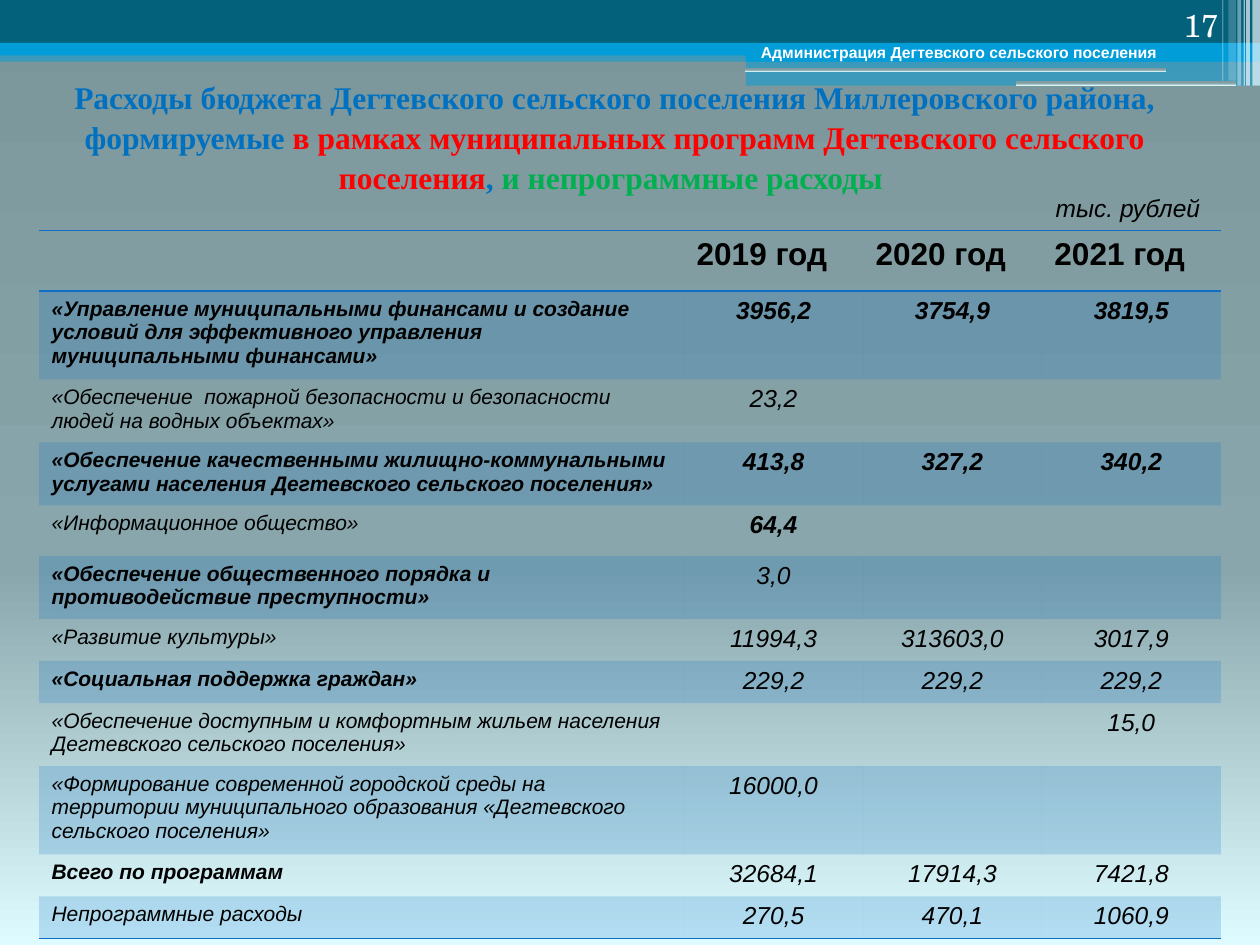
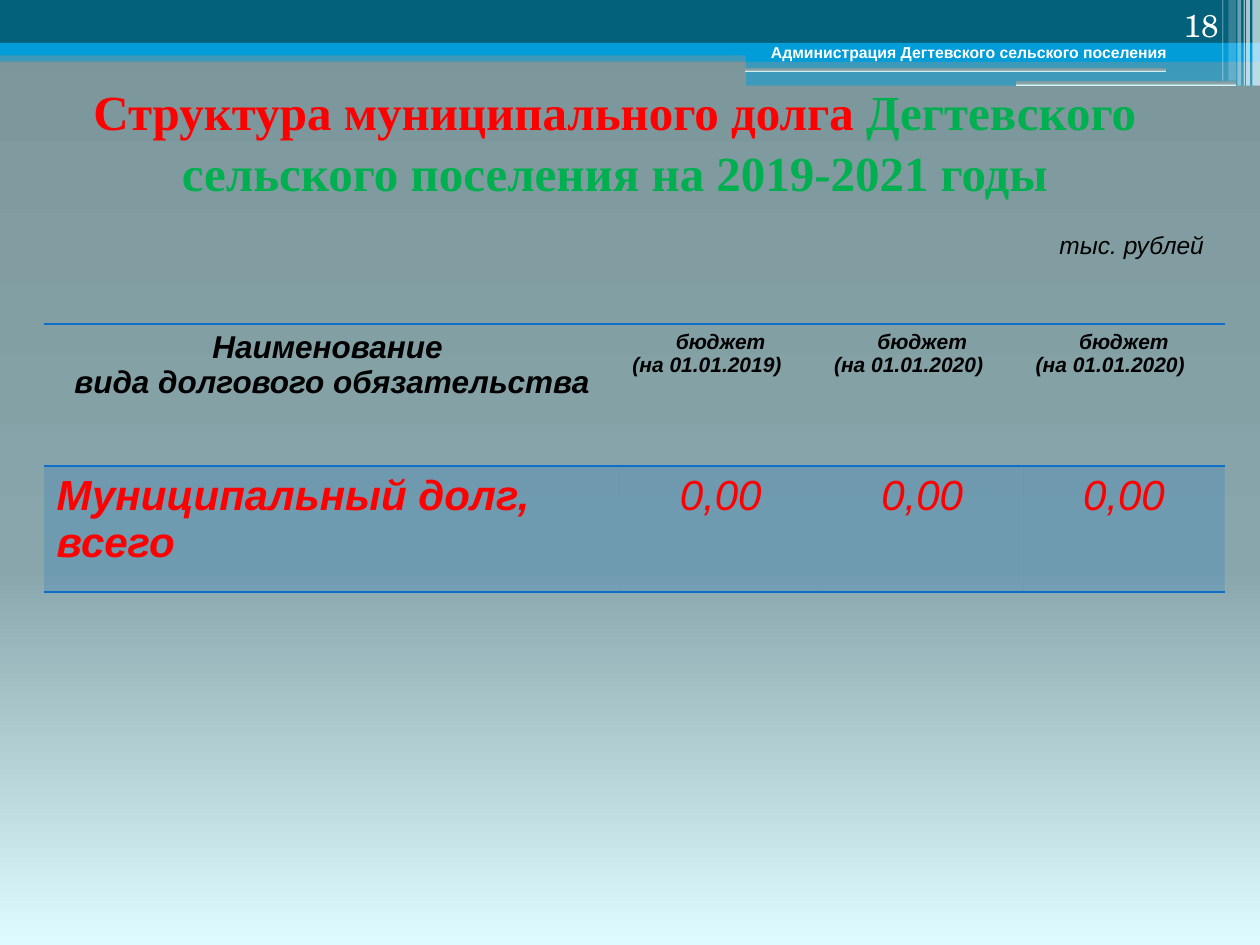
from dataclasses import dataclass
from typing import Any, Optional, Sequence

import pptx
import pptx.dml.color
import pptx.enum.shapes
import pptx.enum.text
import pptx.oxml
import pptx.oxml.ns
import pptx.util
from lxml import etree

Inches = pptx.util.Inches
Pt = pptx.util.Pt
qn = pptx.oxml.ns.qn
ALIGN = pptx.enum.text.PP_ALIGN
ANCHOR = pptx.enum.text.MSO_ANCHOR
SHAPE = pptx.enum.shapes.MSO_SHAPE

COLORS = {
    "teal": "04617B", "sky": "009DD9", "white": "FFFFFF", "black": "000000",
    "accent": "0F6FC6", "blue": "0070C0", "red": "FF0000", "green": "00B050",
}
BACKDROP = ((0, "7B969A"), (60, "88A6AB"), (100, "DEFBFF"))
SANS, SERIF, NUMBER_FONT = "Arial", "Times New Roman", "TeX Gyre Schola"
PLAIN_TABLE = "{2D5ABB26-0587-4C30-8999-92F81FD0307C}"
ROW_TINT = 20


@dataclass(frozen=True)
class Box:
    left: float
    top: float
    width: float
    height: float

    def lengths(self) -> tuple:
        return tuple(Inches(v) for v in (self.left, self.top, self.width, self.height))


@dataclass(frozen=True)
class Band:
    box: Box
    color: Optional[str] = None  # None takes the backdrop gradient
    opacity: int = 100


@dataclass(frozen=True)
class Span:
    text: str
    size: float
    color: str = "black"
    bold: bool = False
    italic: bool = False
    font: str = SANS


@dataclass(frozen=True)
class Entry:
    lines: Sequence[Span] = ()
    aligns: Sequence[Any] = (ALIGN.LEFT,)


@dataclass(frozen=True)
class Program:
    title: str
    amounts: Sequence[str]
    height: float
    bold_title: bool = False
    bold_amounts: bool = False


BANDS = [
    Band(Box(0, 0.4, 10, 0.09), "sky", 50),
    Band(Box(0, 0, 10, 0.34), "teal"),
    Band(Box(0, 0.34, 10, 0.1), "sky"),
    Band(Box(5.92, 0.39, 4.08, 0.1), "sky"),
    Band(Box(5.92, 0.48, 4.08, 0.2), "sky", 50),
    Band(Box(5.91, 0.54, 3.35, 0.03)),
    Band(Box(8.06, 0.64, 1.75, 0.04)),
] + [
    Band(Box(left, 0, width, height), "white", opacity)
    for left, width, height, opacity in (
        (9.94, 0.06, 0.68, 65), (9.89, 0.03, 0.68, 65), (9.87, 0.01, 0.68, 60),
        (9.82, 0.03, 0.68, 40), (9.75, 0.06, 0.64, 20), (9.7, 0.01, 0.64, 30),
    )
]

PROGRAMS = [
    Program("«Управление муниципальными финансами и создание условий для эффективного "
            "управления муниципальными финансами»",
            ("3956,2", "3754,9", "3819,5"), 0.66, True, True),
    Program("«Обеспечение  пожарной безопасности и безопасности людей на водных объектах»",
            ("23,2", "", ""), 0.47),
    Program("«Обеспечение качественными жилищно-коммунальными услугами населения "
            "Дегтевского сельского поселения»",
            ("413,8", "327,2", "340,2"), 0.47, True, True),
    Program("«Информационное общество»", ("64,4", "", ""), 0.4, False, True),
    Program("«Обеспечение общественного порядка и противодействие преступности»",
            ("3,0", "", ""), 0.47, True),
    Program("«Развитие культуры»", ("11994,3", "313603,0", "3017,9"), 0.32),
    Program("«Социальная поддержка граждан»", ("229,2", "229,2", "229,2"), 0.32, True),
    Program("«Обеспечение доступным и комфортным жильем населения Дегтевского "
            "сельского поселения»", ("", "", "15,0"), 0.47),
    Program("«Формирование современной городской среды на территории муниципального "
            "образования «Дегтевского сельского поселения»", ("16000,0", "", ""), 0.66),
    Program("Всего по программам", ("32684,1", "17914,3", "7421,8"), 0.32, True),
    Program("Непрограммные расходы", ("270,5", "470,1", "1060,9"), 0.32),
]


# Fills
def rgb(name: str) -> pptx.dml.color.RGBColor:
    return pptx.dml.color.RGBColor.from_string(COLORS[name])


def fill_solid(fill: Any, element: Any, color: str, opacity: int = 100) -> None:
    fill.solid()
    fill.fore_color.rgb = rgb(color)
    if opacity < 100:
        tone = element.find(".//" + qn("a:srgbClr"))
        etree.SubElement(tone, qn("a:alpha"), val=str(opacity * 1000))


def fill_backdrop(fill: Any, element: Any) -> None:
    fill.gradient()
    fill.gradient_angle = 270
    stops = element.find(".//" + qn("a:gsLst"))
    for stop in list(stops):
        stops.remove(stop)
    for position, color in BACKDROP:
        stop = etree.SubElement(stops, qn("a:gs"), pos=str(position * 1000))
        etree.SubElement(stop, qn("a:srgbClr"), val=color)


# Text
def add_span(paragraph: Any, span: Span) -> None:
    run = paragraph.add_run()
    run.text = span.text
    run.font.size = Pt(span.size)
    run.font.name = span.font
    run.font.bold = span.bold
    run.font.italic = span.italic
    run.font.color.rgb = rgb(span.color)


def add_text(slide: Any, box: Box, spans: Sequence[Span], align: Any = ALIGN.LEFT,
             anchor: Any = ANCHOR.TOP, spacing: float = 1.0) -> None:
    frame = slide.shapes.add_textbox(*box.lengths()).text_frame
    frame.word_wrap = True
    frame.vertical_anchor = anchor
    paragraph = frame.paragraphs[0]
    paragraph.alignment = align
    paragraph.line_spacing = spacing
    for span in spans:
        add_span(paragraph, span)


# Tables
def add_rule(cell: Any, side: str) -> None:
    line = etree.Element(qn(f"a:{side}"), w=str(Pt(1)))
    solid = etree.SubElement(line, qn("a:solidFill"))
    etree.SubElement(solid, qn("a:srgbClr"), val=COLORS["accent"])
    cell._tc.get_or_add_tcPr().insert(0, line)


def fill_cell(cell: Any, entry: Entry, tinted: bool) -> None:
    if tinted:
        fill_solid(cell.fill, cell._tc.get_or_add_tcPr(), "accent", ROW_TINT)
    else:
        cell.fill.background()
    for number, (span, align) in enumerate(zip(entry.lines, entry.aligns)):
        frame = cell.text_frame
        paragraph = frame.add_paragraph() if number else frame.paragraphs[0]
        paragraph.alignment = align
        add_span(paragraph, span)


def add_ruled_table(slide: Any, left: float, top: float, widths: Sequence[float],
                    heights: Sequence[float], rows: Sequence[Sequence[Entry]]) -> None:
    box = Box(left, top, sum(widths), sum(heights))
    table = slide.shapes.add_table(len(rows), len(widths), *box.lengths()).table
    table._tbl.find(".//" + qn("a:tableStyleId")).text = PLAIN_TABLE
    for column, width in zip(table.columns, widths):
        column.width = Inches(width)
    for row, height in zip(table.rows, heights):
        row.height = Inches(height)
    for r, entries in enumerate(rows):
        for c, entry in enumerate(entries):
            cell = table.cell(r, c)
            fill_cell(cell, entry, tinted=r % 2 == 1)
            if r in (0, len(rows) - 1):
                add_rule(cell, "lnB")
            if r == 0:
                add_rule(cell, "lnT")


# Shared slide frame
def add_band(slide: Any, band: Band) -> None:
    kind = SHAPE.RECTANGLE if band.color else SHAPE.ROUNDED_RECTANGLE
    shape = slide.shapes.add_shape(kind, *band.box.lengths())
    shape.shadow.inherit = False
    shape.line.fill.background()
    if band.color:
        fill_solid(shape.fill, shape.element.spPr, band.color, band.opacity)
    else:
        fill_backdrop(shape.fill, shape.element.spPr)


def start_slide(deck: Any, number: int, owner_box: Box, title_height: float,
                title: Sequence[Span], unit_box: Box) -> Any:
    slide = deck.slides.add_slide(deck.slide_layouts[6])
    fill_backdrop(slide.background.fill, slide.element)
    for band in BANDS:
        add_band(slide, band)
    add_text(slide, owner_box,
             [Span("Администрация Дегтевского сельского поселения", 9, "white", True)])
    add_text(slide, Box(0, 0.6, 9.76, title_height), title,
             ALIGN.CENTER, ANCHOR.MIDDLE, 1.05)
    add_text(slide, Box(8.94, 0, 0.83, 0.4),
             [Span(str(number), 18, "white", font=NUMBER_FONT)], ALIGN.RIGHT, ANCHOR.BOTTOM)
    add_text(slide, unit_box, [Span("тыс. рублей", 14, italic=True)])
    return slide


def title_span(text: str, size: float, color: str) -> Span:
    return Span(text, size, color, bold=True, font=SERIF)


# Spending by programme
def program_row(program: Program) -> list:
    title = Span(program.title, 12, bold=program.bold_title, italic=True)
    amounts = [
        Entry([Span(amount, 14, bold=program.bold_amounts, italic=True)], [ALIGN.CENTER])
        if amount else Entry()
        for amount in program.amounts
    ]
    return [Entry([title])] + amounts


def build_spending(deck: Any) -> None:
    title = [
        title_span("Расходы бюджета Дегтевского сельского поселения Миллеровского района, "
                   "формируемые ", 18, "blue"),
        title_span("в рамках муниципальных программ Дегтевского сельского поселения", 18, "red"),
        title_span(", ", 18, "blue"),
        title_span("и непрограммные расходы ", 18, "green"),
    ]
    slide = start_slide(deck, 17, Box(5.94, 0.29, 3.63, 0.25), 0.96, title,
                        Box(8.28, 1.48, 1.42, 0.34))
    years = [Entry([Span(f"{year} год", 18, bold=True)]) for year in (2019, 2020, 2021)]
    add_ruled_table(slide, 0.31, 1.83, [5.12] + [1.42] * 3,
                    [0.48] + [program.height for program in PROGRAMS],
                    [[Entry()] + years] + [program_row(program) for program in PROGRAMS])


# Municipal debt
def build_debt(deck: Any) -> None:
    title = [
        title_span("Структура муниципального долга ", 28, "red"),
        title_span("Дегтевского сельского поселения на 2019-2021 годы", 28, "green"),
    ]
    slide = start_slide(deck, 18, Box(6.02, 0.29, 3.55, 0.25), 1.02, title,
                        Box(8.31, 1.78, 1.42, 0.34))

    def heading(lines: Sequence[str], size: float, aligns: Sequence[Any]) -> Entry:
        return Entry([Span(line, size, bold=True, italic=True) for line in lines], aligns)

    header = [heading(("Наименование ", "вида долгового обязательства"), 18,
                      (ALIGN.CENTER, ALIGN.CENTER))]
    header += [heading(("бюджет", f"(на {date})"), 12, (ALIGN.CENTER, ALIGN.LEFT))
               for date in ("01.01.2019", "01.01.2020", "01.01.2020")]
    debt = Entry([Span(line, 24, "red", True, True)
                  for line in ("Муниципальный долг,", "всего")], (ALIGN.LEFT, ALIGN.LEFT))
    amount = Entry([Span("0,00", 24, "red", italic=True)], [ALIGN.CENTER])
    add_ruled_table(slide, 0.35, 2.57, [4.57] + [1.6] * 3, [1.13, 1],
                    [header, [debt] + [amount] * 3])


def main() -> None:
    deck = pptx.Presentation()
    deck.slide_width, deck.slide_height = Inches(10), Inches(7.5)
    build_spending(deck)
    build_debt(deck)
    deck.save("out.pptx")


if __name__ == "__main__":
    main()
